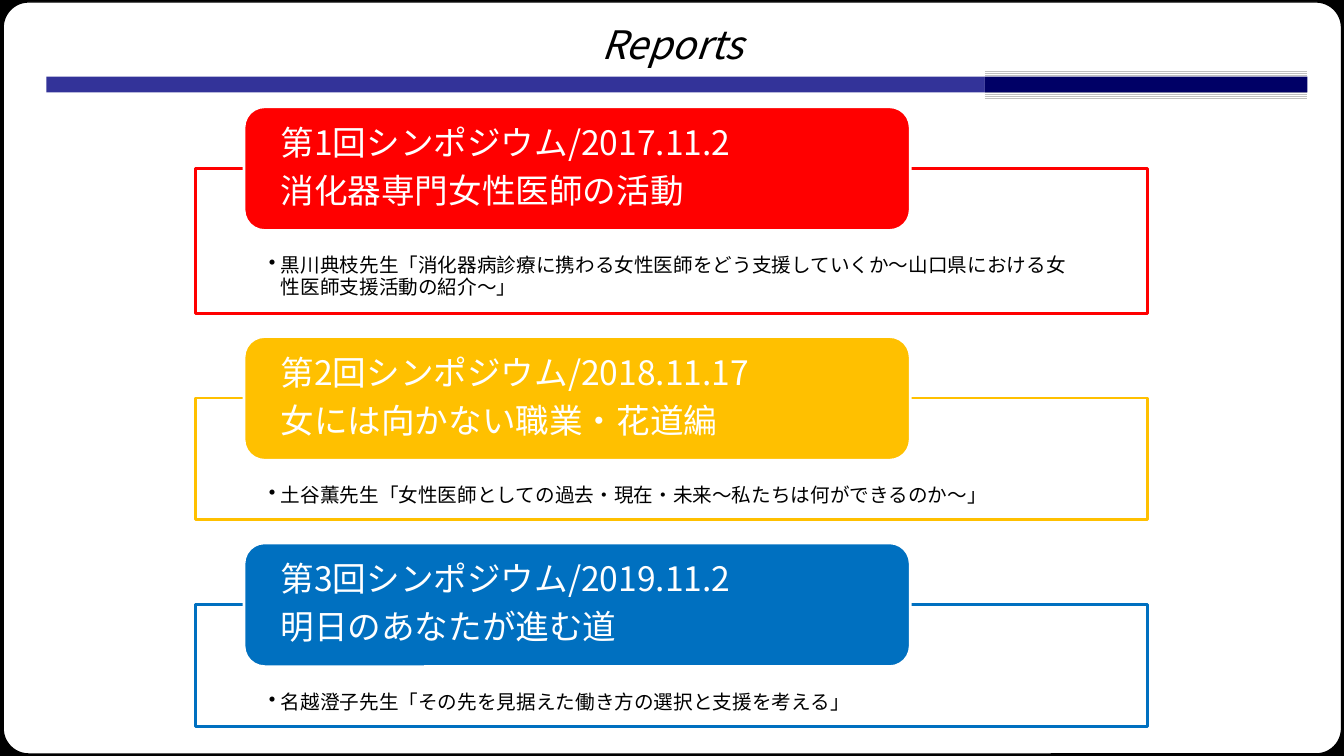
from lxml import etree
from pptx import Presentation
from pptx.dml.color import RGBColor
from pptx.enum import dml, shapes, text
from pptx.oxml import ns
from pptx.util import Cm, Pt

BLACK = RGBColor(0, 0, 0)
WHITE = RGBColor(255, 255, 255)
INDIGO = RGBColor(0x33, 0x33, 0x99)
NAVY = RGBColor(0, 0, 0x66)
SILVER = RGBColor(0xC0, 0xC0, 0xC0)
RED = RGBColor(255, 0, 0)
AMBER = RGBColor(255, 0xC0, 0)
BLUE = RGBColor(0, 0x70, 0xC0)

FONT = "Noto Sans CJK JP"
RECT = shapes.MSO_SHAPE.RECTANGLE
ROUNDED = shapes.MSO_SHAPE.ROUNDED_RECTANGLE

SYMPOSIA = [
    (4.24, 3.66, RED, "第1回シンポジウム/2017.11.2", "消化器専門女性医師の活動",
     "黒川典枝先生「消化器病診療に携わる女性医師をどう支援していくか～山口県における女性医師支援活動の紹介～」"),
    (10.03, 3.07, AMBER, "第2回シンポジウム/2018.11.17", "女には向かない職業・花道編",
     "土谷薫先生「女性医師としての過去・現在・未来～私たちは何ができるのか～」"),
    (15.23, 3.07, BLUE, "第3回シンポジウム/2019.11.2", "明日のあなたが進む道",
     "名越澄子先生「その先を見据えた働き方の選択と支援を考える」"),
]


def add_block(slide, kind, box, fill, line=None, line_width=2):
    """Add a preset shape with a plain fill and an optional outline."""
    block = slide.shapes.add_shape(kind, *map(Cm, box))
    block.shadow.inherit = False
    block.fill.solid()
    block.fill.fore_color.rgb = fill
    if line is None:
        block.line.fill.background()
    else:
        block.line.color.rgb = line
        block.line.width = Pt(line_width)
    return block


def set_frame(shape, margins, anchor):
    """Set the margins and anchor of a shape's text and return its frame."""
    frame = shape.text_frame
    frame.word_wrap = True
    frame.vertical_anchor = anchor
    frame.margin_left, frame.margin_top, frame.margin_right, frame.margin_bottom = map(Cm, margins)
    return frame


def style_paragraph(paragraph, size, color, align=text.PP_ALIGN.LEFT, italic=False):
    """Align a paragraph and format its runs."""
    paragraph.alignment = align
    for run in paragraph.runs:
        run.font.size = Pt(size)
        run.font.italic = italic
        run.font.color.rgb = color
        run.font.name = FONT
        etree.SubElement(run.font._element, ns.qn("a:ea"), typeface=FONT)


def add_bullet(paragraph, indent):
    """Give a paragraph a round bullet with a hanging indent."""
    properties = paragraph._p.get_or_add_pPr()
    properties.set("marL", str(Cm(indent)))
    properties.set("indent", str(-Cm(indent)))
    etree.SubElement(properties, ns.qn("a:buChar"), char="•")


def add_backdrop(slide):
    """Draw the black background, the white sheet and the header bar."""
    slide.background.fill.solid()
    slide.background.fill.fore_color.rgb = BLACK
    sheet = add_block(slide, ROUNDED, (0.08, 0.05, 33.73, 18.95), WHITE, BLACK, 1)
    sheet.adjustments[0] = 0.034
    add_block(slide, RECT, (1.17, 1.93, 23.65, 0.4), INDIGO)
    stripes = add_block(slide, RECT, (24.82, 1.74, 8.13, 0.76), WHITE)
    stripes.fill.patterned()
    stripes.fill.pattern = dml.MSO_PATTERN.LIGHT_HORIZONTAL
    stripes.fill.fore_color.rgb = SILVER
    stripes.fill.back_color.rgb = WHITE
    add_block(slide, RECT, (24.82, 1.93, 8.13, 0.4), NAVY)


def add_title(slide, wording):
    """Add the centred italic slide title."""
    title = slide.shapes.add_textbox(*map(Cm, (0.94, 0.51, 32, 1.19)))
    frame = set_frame(title, (0, 0, 0, 0), text.MSO_ANCHOR.MIDDLE)
    frame.text = wording
    style_paragraph(frame.paragraphs[0], 28, BLACK, text.PP_ALIGN.CENTER, True)


def add_symposium(slide, top, height, color, session, theme, lecture):
    """Add an outlined lecture panel with its heading banner."""
    panel = add_block(slide, RECT, (4.93, top, 24, height), WHITE, color)
    white = panel.fill._xPr.find(ns.qn("a:solidFill"))[0]
    etree.SubElement(white, ns.qn("a:alpha"), val="90000")
    frame = set_frame(panel, (1.85, 2.21, 1.85, 0.28), text.MSO_ANCHOR.TOP)
    frame.text = lecture
    entry = frame.paragraphs[0]
    entry.line_spacing = 0.9
    add_bullet(entry, 0.3)
    style_paragraph(entry, 14, BLACK)

    banner = add_block(slide, ROUNDED, (6.15, top - 1.55, 16.79, 3.12), color, WHITE)
    frame = set_frame(banner, (0.77, 0, 0.77, 0), text.MSO_ANCHOR.MIDDLE)
    frame.text = f"{session}\n{theme}"
    for heading in frame.paragraphs:
        heading.line_spacing = 0.9
        heading.space_after = Pt(8.4)
        style_paragraph(heading, 24, WHITE)


def main():
    """Build the reports slide and save it."""
    deck = Presentation()
    deck.slide_width, deck.slide_height = Cm(33.87), Cm(19.05)
    slide = deck.slides.add_slide(deck.slide_layouts[6])
    add_backdrop(slide)
    add_title(slide, "Reports")
    for symposium in SYMPOSIA:
        add_symposium(slide, *symposium)
    deck.save("out.pptx")


if __name__ == "__main__":
    main()
